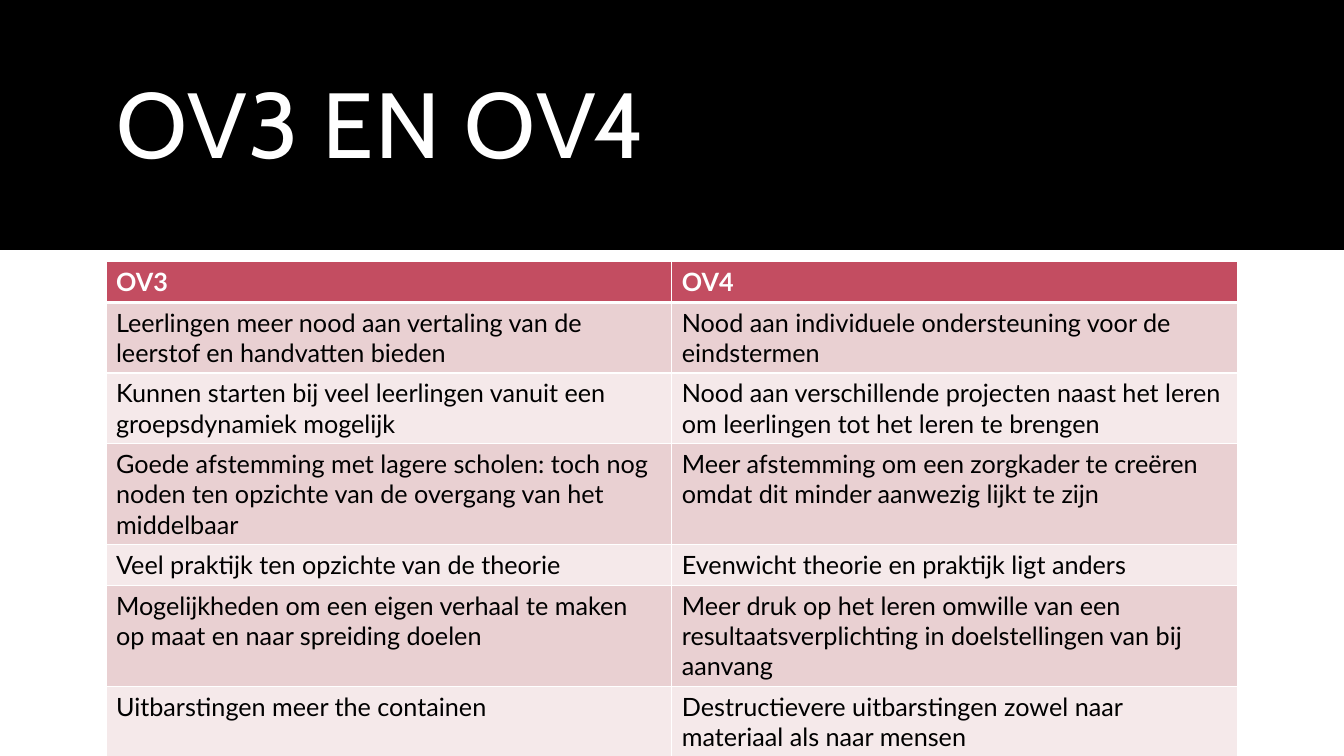
from lxml import etree
from pptx import Presentation
from pptx.dml.color import RGBColor
from pptx.enum.shapes import MSO_SHAPE
from pptx.enum.text import MSO_ANCHOR, MSO_AUTO_SIZE, PP_ALIGN
from pptx.oxml.ns import qn
from pptx.util import Cm, Pt

RECTANGLE = MSO_SHAPE.RECTANGLE
MIDDLE = MSO_ANCHOR.MIDDLE
NO_AUTOFIT = MSO_AUTO_SIZE.NONE
LEFT = PP_ALIGN.LEFT

BLACK = RGBColor(0x00, 0x00, 0x00)
WHITE = RGBColor(0xFF, 0xFF, 0xFF)
HEADER_RED = RGBColor(0xC3, 0x4D, 0x61)
DARK_PINK = RGBColor(0xE9, 0xD0, 0xD2)
LIGHT_PINK = RGBColor(0xF5, 0xE9, 0xEA)

TITLE_FONT = "Cabin"
BODY_FONT = "Lato"
SLIDE_WIDTH, SLIDE_HEIGHT = Cm(33.87), Cm(19.05)
BAND_HEIGHT = Cm(6.3)
MARGIN = Cm(2.67)
CONTENT_WIDTH = Cm(28.52)
ROW_HEIGHT = Cm(1.03)

COMPARISON = [
    ("OV3", "OV4"),
    ("Leerlingen meer nood aan vertaling van de leerstof en handvatten bieden",
     "Nood aan individuele ondersteuning voor de eindstermen"),
    ("Kunnen starten bij veel leerlingen vanuit een groepsdynamiek mogelijk",
     "Nood aan verschillende projecten naast het leren om leerlingen tot het leren te brengen"),
    ("Goede afstemming met lagere scholen: toch nog noden ten opzichte van de overgang van het middelbaar",
     "Meer afstemming om een zorgkader te creëren omdat dit minder aanwezig lijkt te zijn"),
    ("Veel praktijk ten opzichte van de theorie",
     "Evenwicht theorie en praktijk ligt anders"),
    ("Mogelijkheden om een eigen verhaal te maken op maat en naar spreiding doelen",
     "Meer druk op het leren omwille van een resultaatsverplichting in doelstellingen van bij aanvang"),
    ("Uitbarstingen meer the containen",
     "Destructievere uitbarstingen zowel naar materiaal als naar mensen"),
]


def format_paragraph(paragraph, name, size, color, bold=False):
    paragraph.alignment = LEFT
    font = paragraph.font
    font.name = name
    font.size = Pt(size)
    font.bold = bold
    font.color.rgb = color


def add_title_band(slide, left, top, width, height):
    band = slide.shapes.add_shape(RECTANGLE, left, top, width, height)
    band.shadow.inherit = False
    band.fill.solid()
    band.fill.fore_color.rgb = BLACK
    band.line.fill.background()
    slide.shapes._spTree.insert(2, band._element)

    title = slide.shapes.title
    title.left, title.top = left + MARGIN, top + Cm(0.89)
    title.width, title.height = CONTENT_WIDTH, Cm(4.72)
    frame = title.text_frame
    frame.text = "OV3 EN OV4"
    frame.word_wrap = True
    frame.auto_size = NO_AUTOFIT
    frame.vertical_anchor = MIDDLE
    paragraph = frame.paragraphs[0]
    paragraph.line_spacing = 0.9
    format_paragraph(paragraph, TITLE_FONT, 66, WHITE)
    paragraph._p.pPr.find(qn("a:defRPr")).set("spc", "120")


def add_border(cell, side, width):
    properties = cell._tc.get_or_add_tcPr()
    line = etree.SubElement(properties, qn(f"a:ln{side}"), w=str(Pt(width)))
    fill = etree.SubElement(line, qn("a:solidFill"))
    etree.SubElement(fill, qn("a:srgbClr"), val=str(WHITE))


def format_cell(cell, text, row):
    is_header = row == 0
    for side in "LRTB":
        meets_header = (row, side) in ((0, "B"), (1, "T"))
        add_border(cell, side, 3 if meets_header else 1)
    cell.fill.solid()
    stripe = DARK_PINK if row % 2 else LIGHT_PINK
    cell.fill.fore_color.rgb = HEADER_RED if is_header else stripe
    cell.text = text
    color = WHITE if is_header else BLACK
    format_paragraph(cell.text_frame.paragraphs[0], BODY_FONT, 18, color, is_header)


def add_comparison_table(slide, left, top, width):
    row_count, column_count = len(COMPARISON), len(COMPARISON[0])
    table = slide.shapes.add_table(
        row_count, column_count, left, top, width, ROW_HEIGHT * row_count).table
    for row, texts in enumerate(COMPARISON):
        for column, text in enumerate(texts):
            format_cell(table.cell(row, column), text, row)


def main():
    deck = Presentation()
    deck.slide_width, deck.slide_height = SLIDE_WIDTH, SLIDE_HEIGHT
    slide = deck.slides.add_slide(deck.slide_layouts[5])
    add_title_band(slide, 0, 0, SLIDE_WIDTH, BAND_HEIGHT)
    add_comparison_table(slide, MARGIN, Cm(6.59), CONTENT_WIDTH)
    deck.save("out.pptx")


if __name__ == "__main__":
    main()
